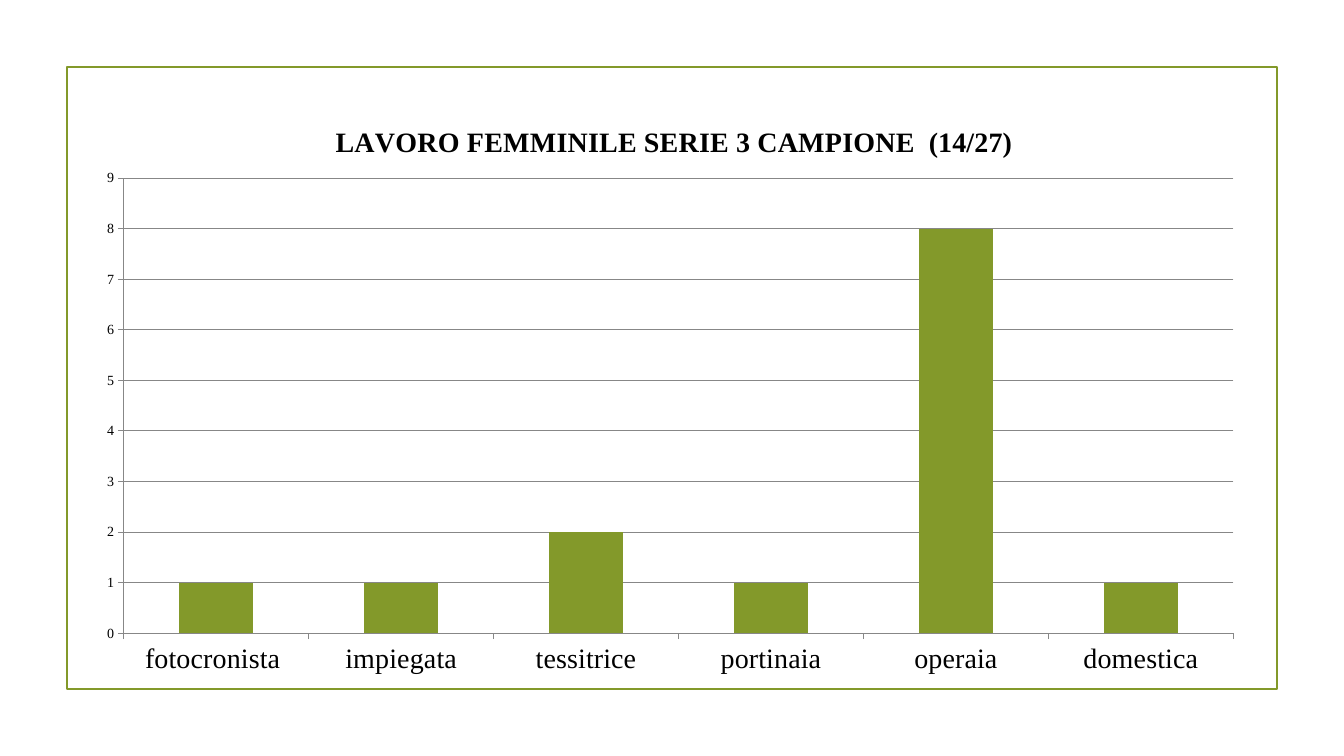
import pptx
import pptx.chart.data
import pptx.dml.color
import pptx.enum.chart
import pptx.enum.shapes
import pptx.oxml
import pptx.oxml.ns
import pptx.util

EMU_PER_PX = 914400 / 100.8
FONT = "Times New Roman"
GREEN = "83992A"
GREY = "878787"
BLACK = "000000"
WHITE = "FFFFFF"
CHART_BOX = (84, 100, 1174, 588)
TITLE_CORNER = (330, 119)
PLOT_BOX = (124, 178, 1110, 455)
WORKERS = {
    "fotocronista ": 1,
    "impiegata": 1,
    "tessitrice": 2,
    "portinaia": 1,
    "operaia": 8,
    "domestica": 1,
}


def px(length):
    return pptx.util.Emu(round(length * EMU_PER_PX))


def color(value):
    return pptx.dml.color.RGBColor.from_string(value)


def format_font(font, size=10, bold=False, fill=BLACK):
    font.name = FONT
    font.size = pptx.util.Pt(size)
    font.bold = bold
    font.color.rgb = color(fill)


def write_text(text_frame, text, **font_format):
    run = text_frame.paragraphs[0].add_run()
    run.text = text
    format_font(run.font, **font_format)


def format_line(line, value, width):
    line.color.rgb = color(value)
    line.width = pptx.util.Pt(width)


def add_frame(slide, box):
    frame = slide.shapes.add_shape(
        pptx.enum.shapes.MSO_SHAPE.RECTANGLE, *map(px, box))
    frame.shadow.inherit = False
    frame.fill.background()
    format_line(frame.line, GREEN, 1.25)


def place_in_chart(element, index, box, target=None):
    """Give a chart part a manual layout, as fractions of the chart box."""
    left, top, width, height = CHART_BOX
    offsets = (box[0] - left, box[1] - top, *box[2:])
    fractions = [offset / full for offset, full
                 in zip(offsets, (width, height, width, height))]
    names = ("x", "y", "w", "h")[:len(box)]
    settings = [("layoutTarget", target)] if target else []
    settings += [(f"{name}Mode", "edge") for name in names[:2]]
    settings += [(name, f"{fraction:.3f}")
                 for name, fraction in zip(names, fractions)]
    children = "".join(f'<c:{name} val="{value}"/>' for name, value in settings)
    for old_layout in element.findall(pptx.oxml.ns.qn("c:layout")):
        element.remove(old_layout)
    element.insert(index, pptx.oxml.parse_xml(
        f'<c:layout {pptx.oxml.ns.nsdecls("c")}>'
        f'<c:manualLayout>{children}</c:manualLayout></c:layout>'))


def format_axis(axis, size, gridlines):
    axis.has_major_gridlines = gridlines
    axis.major_tick_mark = pptx.enum.chart.XL_TICK_MARK.OUTSIDE
    axis.minor_tick_mark = pptx.enum.chart.XL_TICK_MARK.NONE
    format_line(axis.format.line, GREY, 0.75)
    format_font(axis.tick_labels.font, size=size)
    if gridlines:
        format_line(axis.major_gridlines.format.line, GREY, 0.75)


def add_column_chart(slide, title, values):
    data = pptx.chart.data.CategoryChartData()
    data.categories = list(values)
    data.add_series("Series 1", list(values.values()))
    chart = slide.shapes.add_chart(
        pptx.enum.chart.XL_CHART_TYPE.COLUMN_STACKED,
        *map(px, CHART_BOX), data).chart
    format_font(chart.font)
    chart.has_legend = False
    chart.has_title = True
    write_text(chart.chart_title.text_frame, title, size=20, bold=True)
    chart.chart_title.include_in_layout = False

    plot = chart.plots[0]
    plot.gap_width = 150
    plot.overlap = 100
    plot.vary_by_categories = False
    fill = plot.series[0].format.fill
    fill.solid()
    fill.fore_color.rgb = color(GREEN)

    format_axis(chart.category_axis, size=20, gridlines=False)
    format_axis(chart.value_axis, size=10, gridlines=True)
    chart.value_axis.minimum_scale = 0
    chart.value_axis.maximum_scale = 9
    chart.value_axis.major_unit = 1

    title_element = chart.element.find(".//" + pptx.oxml.ns.qn("c:title"))
    plot_element = chart.element.find(".//" + pptx.oxml.ns.qn("c:plotArea"))
    place_in_chart(title_element, 1, TITLE_CORNER)
    place_in_chart(plot_element, 0, PLOT_BOX, target="inner")


def main():
    presentation = pptx.Presentation()
    presentation.slide_width = px(1344)
    presentation.slide_height = px(756)
    slide = presentation.slides.add_slide(presentation.slide_layouts[6])
    slide.background.fill.solid()
    slide.background.fill.fore_color.rgb = color(WHITE)
    add_frame(slide, (67, 67, 1210, 622))
    add_column_chart(slide, "LAVORO FEMMINILE SERIE 3 CAMPIONE  (14/27)", WORKERS)
    presentation.save("out.pptx")


if __name__ == "__main__":
    main()
